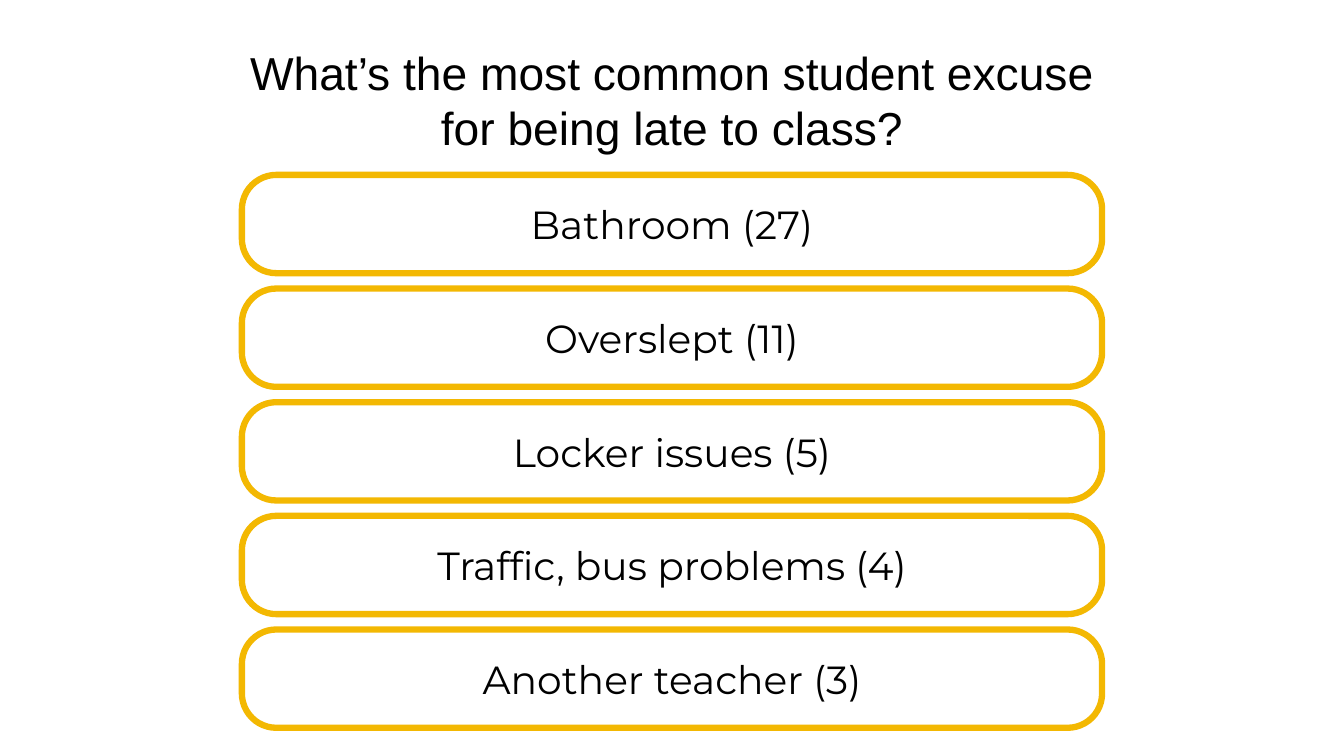
from pptx import Presentation
from pptx.dml.color import RGBColor
from pptx.enum.shapes import MSO_SHAPE as Shape
from pptx.enum.text import MSO_ANCHOR as Anchor, PP_ALIGN as Align
from pptx.util import Emu, Pt

EMU_PER_PX = 9144  # 100 px to the inch

BLACK = RGBColor(0x00, 0x00, 0x00)
WHITE = RGBColor(0xFF, 0xFF, 0xFF)
GOLD = RGBColor(0xF3, 0xB8, 0x02)

# One column holds the question and the answers
COLUMN_LEFT, COLUMN_WIDTH = 480, 1707
FIRST_TOP, LAST_TOP, ANSWER_HEIGHT = 347, 1249, 195

QUESTION = "What’s the most common student excuse for being late to class?"
ANSWERS = [
    ("Bathroom", 27),
    ("Overslept", 11),
    ("Locker issues", 5),
    ("Traffic, bus problems", 4),
    ("Another teacher", 3),
]


def px(length):
    return Emu(round(length * EMU_PER_PX))


def column_box(top, height):
    return px(COLUMN_LEFT), px(top), px(COLUMN_WIDTH), px(height)


def write_centered(shape, text, font_name, size):
    frame = shape.text_frame
    frame.word_wrap = True
    frame.vertical_anchor = Anchor.MIDDLE
    frame.margin_left = frame.margin_right = px(8)
    frame.margin_top = frame.margin_bottom = px(8)
    paragraph = frame.paragraphs[0]
    paragraph.text = text
    paragraph.alignment = Align.CENTER
    paragraph.font.name = font_name
    paragraph.font.size = Pt(size)
    paragraph.font.color.rgb = BLACK


def add_question(slide):
    box = slide.shapes.add_textbox(*column_box(39, 316))
    write_centered(box, QUESTION, "Arial", 66)


def add_answer(slide, top, text):
    shape = slide.shapes.add_shape(
        Shape.ROUNDED_RECTANGLE, *column_box(top, ANSWER_HEIGHT))
    shape.adjustments[0] = 0.35
    shape.shadow.inherit = False
    shape.fill.solid()
    shape.fill.fore_color.rgb = WHITE
    shape.line.color.rgb = GOLD
    shape.line.width = Pt(9)
    write_centered(shape, text, "Montserrat", 56)


def main():
    presentation = Presentation()
    presentation.slide_width = px(2667)
    presentation.slide_height = px(1500)
    slide = presentation.slides.add_slide(presentation.slide_layouts[6])

    add_question(slide)

    # Answers, evenly spaced from most to least common
    pitch = (LAST_TOP - FIRST_TOP) / (len(ANSWERS) - 1)
    for row, (answer, count) in enumerate(ANSWERS):
        add_answer(slide, FIRST_TOP + row * pitch, f"{answer} ({count})")

    presentation.save("out.pptx")


if __name__ == "__main__":
    main()
